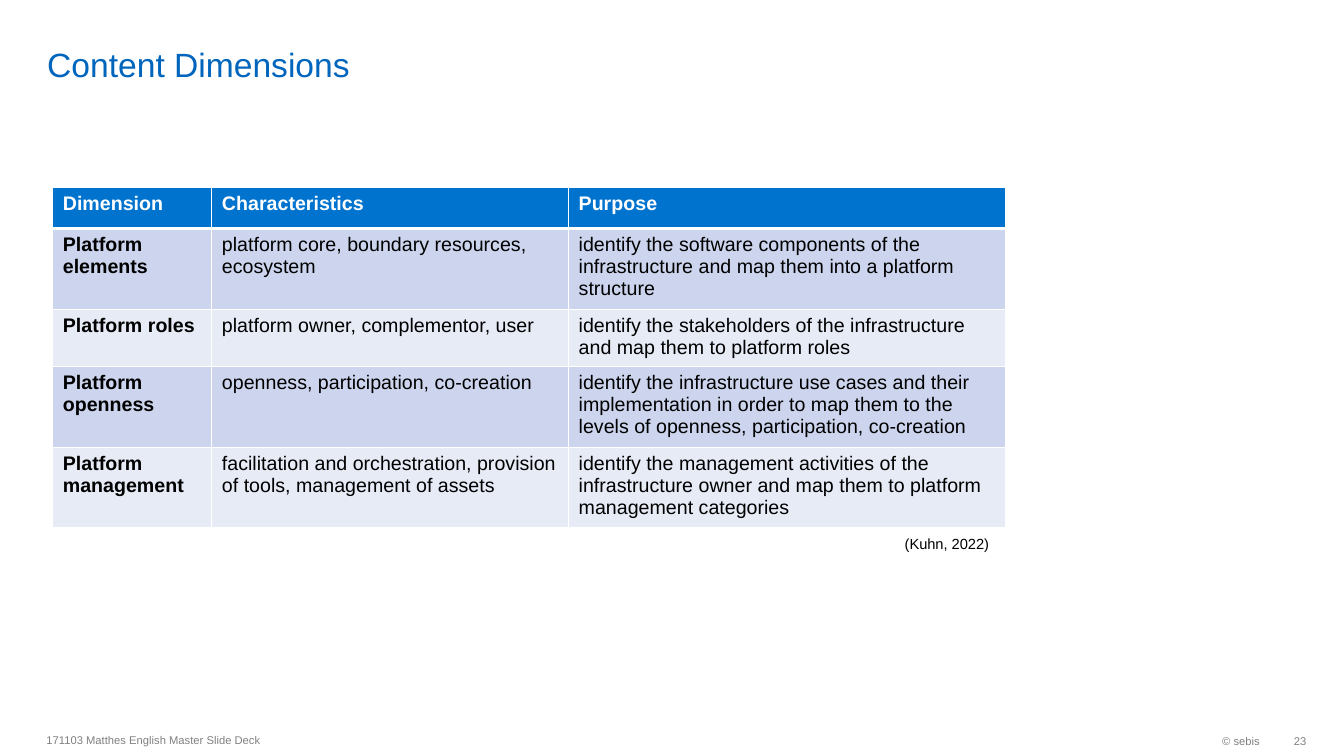
"""Build the content dimensions slide with its table of platform dimensions."""
from typing import NamedTuple

from lxml.etree import SubElement
from pptx import Presentation
from pptx.dml.color import RGBColor
from pptx.enum.text import MSO_ANCHOR as Anchor, PP_ALIGN as Align
from pptx.oxml.ns import qn
from pptx.slide import Slide
from pptx.table import _Cell as Cell
from pptx.text.text import _Paragraph as Paragraph
from pptx.util import Cm, Pt

WHITE = RGBColor(0xFF, 0xFF, 0xFF)
BLACK = RGBColor(0x00, 0x00, 0x00)
GRAY = RGBColor(0x80, 0x80, 0x80)
TITLE_BLUE = RGBColor(0x00, 0x65, 0xBD)
HEADER_BLUE = RGBColor(0x00, 0x73, 0xCF)
BANDS = (RGBColor(0xCC, 0xD5, 0xED), RGBColor(0xE7, 0xEB, 0xF6))

FONT = "Arial"
COLUMN_WIDTHS = (4.01, 8.99, 11)
ROW_HEIGHT = 1.03
THIN, THICK = Pt(1), Pt(3)


class Label(NamedTuple):
    text: str
    left: float
    top: float
    width: float
    height: float
    size: float
    color: RGBColor
    align: Align = Align.LEFT
    anchor: Anchor = Anchor.MIDDLE
    inset_right: float = 0.25
    inset_vertical: float = 0.13


class Dimension(NamedTuple):
    name: str
    characteristics: str
    purpose: str


LABELS = (
    Label("Content Dimensions", 0.94, 0.13, 27.91, 2, 24, TITLE_BLUE,
          anchor=Anchor.BOTTOM, inset_vertical=0),
    Label("© sebis", 26.06, 18.26, 5.94, 0.81, 8, GRAY, Align.RIGHT),
    Label("171103 Matthes English Master Slide Deck", 0.92, 18.25, 16, 0.81, 8, GRAY),
    Label("23", 32, 18.26, 0.92, 0.81, 8, GRAY, Align.RIGHT, inset_right=0),
    Label("(Kuhn, 2022)", 22.55, 13.34, 2.77, 0.74, 10.5, BLACK, anchor=Anchor.TOP),
)

ROWS = (
    Dimension("Dimension", "Characteristics", "Purpose"),
    Dimension("Platform elements", "platform core, boundary resources, ecosystem",
              "identify the software components of the infrastructure and map them "
              "into a platform structure"),
    Dimension("Platform roles", "platform owner, complementor, user",
              "identify the stakeholders of the infrastructure and map them to "
              "platform roles"),
    Dimension("Platform openness", "openness, participation, co-creation",
              "identify the infrastructure use cases and their implementation in order "
              "to map them to the levels of openness, participation, co-creation"),
    Dimension("Platform management",
              "facilitation and orchestration, provision of tools, management of assets",
              "identify the management activities of the infrastructure owner and map "
              "them to platform management categories"),
)


def format_text(paragraph: Paragraph, size: float, color: RGBColor,
                bold: bool = False) -> None:
    for run in paragraph.runs:
        run.font.name = FONT
        run.font.size = Pt(size)
        run.font.bold = bold
        run.font.color.rgb = color


def add_label(slide: Slide, label: Label) -> None:
    shape = slide.shapes.add_textbox(
        Cm(label.left), Cm(label.top), Cm(label.width), Cm(label.height))
    frame = shape.text_frame
    frame.text = label.text
    frame.word_wrap = True
    frame.vertical_anchor = label.anchor
    frame.margin_right = Cm(label.inset_right)
    frame.margin_top = frame.margin_bottom = Cm(label.inset_vertical)
    paragraph = frame.paragraphs[0]
    paragraph.alignment = label.align
    format_text(paragraph, label.size, label.color)


def add_borders(cell: Cell, top: int, bottom: int) -> None:
    properties = cell._tc.get_or_add_tcPr()
    for side, width in (("L", THIN), ("R", THIN), ("T", top), ("B", bottom)):
        line = SubElement(properties, qn(f"a:ln{side}"), w=str(width))
        fill = SubElement(line, qn("a:solidFill"))
        SubElement(fill, qn("a:srgbClr"), val=str(WHITE))


def add_dimension_table(slide: Slide) -> None:
    table = slide.shapes.add_table(
        len(ROWS), len(COLUMN_WIDTHS), Cm(1.33), Cm(4.73),
        Cm(sum(COLUMN_WIDTHS)), Cm(ROW_HEIGHT * len(ROWS))).table
    for column, width in zip(table.columns, COLUMN_WIDTHS):
        column.width = Cm(width)
    for row_index, dimension in enumerate(ROWS):
        is_header = row_index == 0
        table.rows[row_index].height = Cm(ROW_HEIGHT)
        for column_index, text in enumerate(dimension):
            cell = table.cell(row_index, column_index)
            cell.text_frame.text = text
            format_text(cell.text_frame.paragraphs[0], 14,
                        WHITE if is_header else BLACK, is_header or column_index == 0)
            add_borders(cell, THICK if row_index == 1 else THIN,
                        THICK if is_header else THIN)
            cell.fill.solid()
            cell.fill.fore_color.rgb = (
                HEADER_BLUE if is_header else BANDS[(row_index - 1) % len(BANDS)])


def main() -> None:
    presentation = Presentation()
    presentation.slide_width = Cm(33.87)
    presentation.slide_height = Cm(19.05)
    slide = presentation.slides.add_slide(presentation.slide_layouts[6])
    for label in LABELS:
        add_label(slide, label)
    add_dimension_table(slide)
    presentation.save("out.pptx")


if __name__ == "__main__":
    main()
